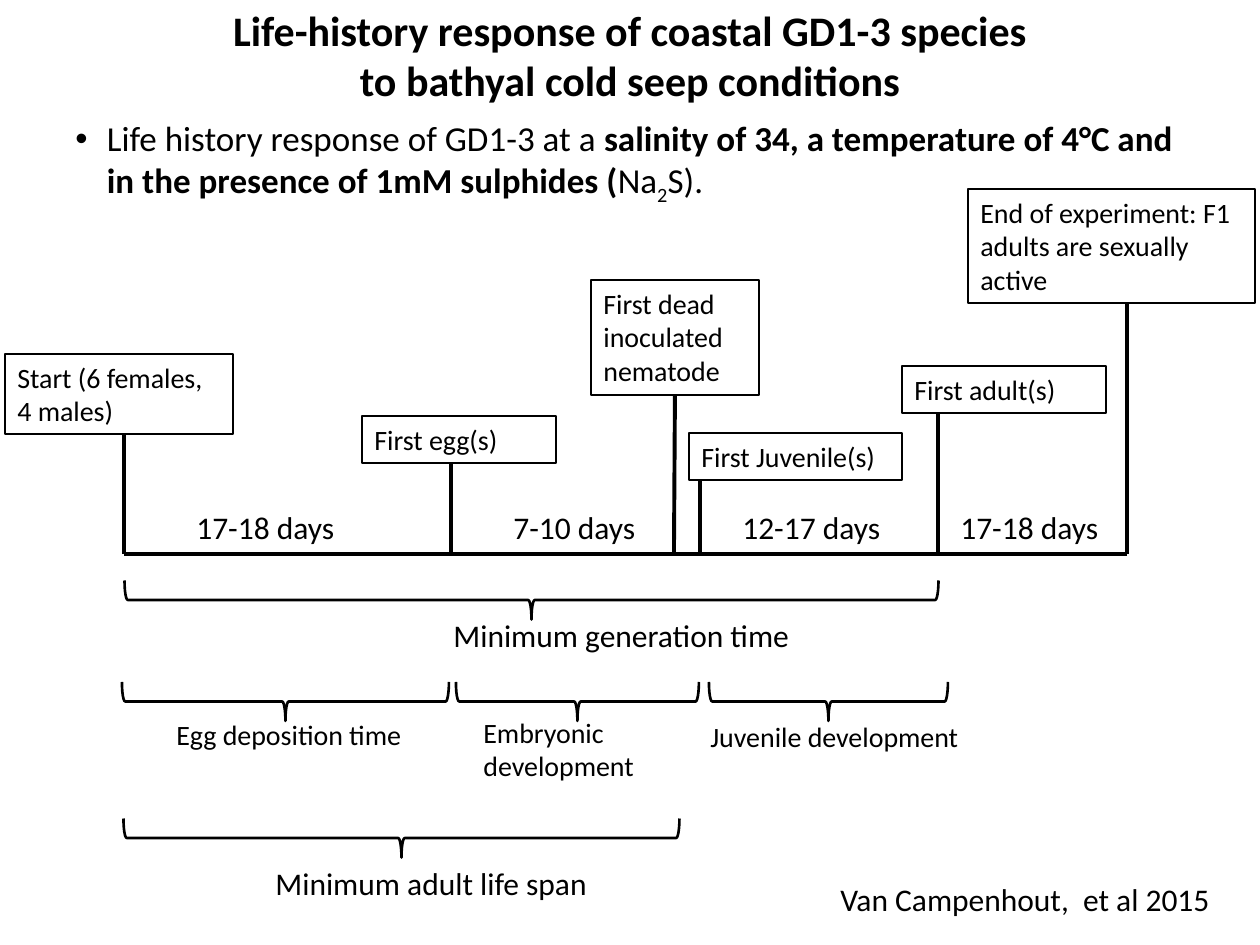
from lxml import etree
from pptx import Presentation
from pptx.dml.color import RGBColor
from pptx.enum.shapes import MSO_CONNECTOR, MSO_SHAPE
from pptx.enum.text import MSO_ANCHOR, MSO_AUTO_SIZE, PP_ALIGN
from pptx.oxml.ns import qn
from pptx.util import Emu, Pt

BLACK = RGBColor(0, 0, 0)
FONT = "Calibri"
STRAIGHT = MSO_CONNECTOR.STRAIGHT
LEFT_BRACE, RECTANGLE = MSO_SHAPE.LEFT_BRACE, MSO_SHAPE.RECTANGLE
TOP, MIDDLE = MSO_ANCHOR.TOP, MSO_ANCHOR.MIDDLE
LEFT, CENTER = PP_ALIGN.LEFT, PP_ALIGN.CENTER
FIT_SHAPE, NO_FIT = MSO_AUTO_SIZE.SHAPE_TO_FIT_TEXT, MSO_AUTO_SIZE.NONE
BOTTOM_SITE = 2

PX = 914400 // 126
SLIDE_W, SLIDE_H = 1260, 945
AXIS_Y = 554
BRACE_DEPTH = 39

TITLE = ["Life-history response of coastal GD1-3 species",
         "to bathyal cold seep conditions"]
# Run text, bold, baseline shift in thousandths of a percent
CONDITIONS = [
    ("Life history response of GD1-3 at a ", False, 0),
    ("salinity of 34, a temperature of 4°C and in the presence of "
     "1mM sulphides (", True, 0),
    ("Na", False, 0),
    ("2", False, -25000),
    ("S).", False, 0),
]
# Event, box (left, top, width, height), x of its stem on the time axis
EVENTS = [
    ("Start (6 females, 4 males)", (5, 354, 228, 80), 124),
    ("First egg(s)", (362, 416, 194, 47), 451),
    ("First dead inoculated nematode", (591, 280, 168, 115), 674),
    ("First Juvenile(s)", (689, 433, 213, 47), 700),
    ("First adult(s)", (902, 366, 204, 47), 938),
    ("End of experiment: F1 adults are sexually active",
     (968, 189, 287, 114), 1127),
]
# Interval between events, left of its label
INTERVALS = [("17-18 days", 184), ("7-10 days", 501),
             ("12-17 days", 730), ("17-18 days", 948)]
# Period, brace (start, end, middle y), label (left, top, width, height), size
PERIODS = [
    ("Minimum generation time", (124, 938, 600), (441, 610, 387, 50), 18),
    ("Egg deposition time", (122, 449, 701), (164, 711, 312, 47), 16),
    ("Embryonic development", (456, 699, 701), (471, 709, 273, 80), 16),
    ("Juvenile development", (709, 948, 701), (698, 713, 339, 47), 16),
    ("Minimum adult life span", (124, 680, 838), (263, 858, 577, 50), 18),
]
CITATION = "Van Campenhout,  et al 2015"


def px(*lengths):
    return [Emu(length * PX) for length in lengths]


def put_text(shape, paragraphs, size=16, bold=False, align=LEFT, anchor=TOP,
             fit=FIT_SHAPE, wrap=True):
    """Fill a shape with paragraphs, each a string or a list of runs."""
    frame = shape.text_frame
    frame.word_wrap = wrap
    frame.auto_size = fit
    frame.vertical_anchor = anchor
    for index, content in enumerate(paragraphs):
        paragraph = frame.add_paragraph() if index else frame.paragraphs[0]
        paragraph.alignment = align
        runs = [(content, bold, 0)] if isinstance(content, str) else content
        for words, is_bold, baseline in runs:
            run = paragraph.add_run()
            run.text = words
            run.font.name, run.font.size = FONT, Pt(size)
            run.font.bold = is_bold
            run.font.color.rgb = BLACK
            if baseline:
                run._r.get_or_add_rPr().set("baseline", str(baseline))


def add_label(slide, words, box, **text_format):
    label = slide.shapes.add_textbox(*px(*box))
    put_text(label, [words], **text_format)
    return label


def add_outline(slide, preset, box, width):
    """Add an unfilled preset shape with a black line."""
    shape = slide.shapes.add_shape(preset, *px(*box))
    shape.shadow.inherit = False
    shape.fill.background()
    shape.line.color.rgb = BLACK
    shape.line.width = Pt(width)
    return shape


def add_line(slide, x1, y1, x2, y2):
    line = slide.shapes.add_connector(STRAIGHT, *px(x1, y1, x2, y2))
    line.line.color.rgb = BLACK
    line.line.width = Pt(2.25)
    etree.SubElement(line._element.spPr, qn("a:effectLst"))
    return line


def add_brace(slide, start, end, middle_y):
    """Add a brace that spans start to end and points down."""
    length = end - start
    box = ((start + end - BRACE_DEPTH) / 2, middle_y - length / 2,
           BRACE_DEPTH, length)
    box = [round(value) for value in box]
    add_outline(slide, LEFT_BRACE, box, 1.5).rotation = 270


def add_event(slide, event, box, stem_x):
    left, top, width, height = box
    event_box = add_outline(slide, RECTANGLE, box, 0.75)
    put_text(event_box, [event])
    stem = add_line(slide, stem_x, top + height, stem_x, AXIS_Y)
    if abs(left + width / 2 - stem_x) <= 1:
        stem.begin_connect(event_box, BOTTOM_SITE)


def add_bullet(paragraph):
    properties = paragraph._p.get_or_add_pPr()
    properties.set("marL", "228600")
    properties.set("indent", "-228600")
    etree.SubElement(properties, qn("a:buFont"), typeface="Arial")
    etree.SubElement(properties, qn("a:buChar"), char="•")
    paragraph.line_spacing = 0.9


def main():
    presentation = Presentation()
    presentation.slide_width, presentation.slide_height = px(SLIDE_W, SLIDE_H)
    slide = presentation.slides.add_slide(presentation.slide_layouts[5])

    title = slide.shapes.title
    title.left, title.top, title.width, title.height = px(0, -24, SLIDE_W, 158)
    put_text(title, TITLE, size=24, bold=True, align=CENTER, anchor=MIDDLE,
             fit=NO_FIT)

    conditions = add_label(slide, CONDITIONS, (63, 115, 1134, 297), size=20,
                           fit=NO_FIT)
    add_bullet(conditions.text_frame.paragraphs[0])

    add_line(slide, EVENTS[0][2], AXIS_Y, EVENTS[-1][2], AXIS_Y)
    for event, box, stem_x in EVENTS:
        add_event(slide, event, box, stem_x)
    for interval, left in INTERVALS:
        add_label(slide, interval, (left, 502, 179, 50), size=18)

    for period, brace, label_box, size in PERIODS:
        add_brace(slide, *brace)
        add_label(slide, period, label_box, size=size)

    add_label(slide, CITATION, (828, 874, 396, 50), size=18, wrap=False)
    presentation.save("out.pptx")


if __name__ == "__main__":
    main()
